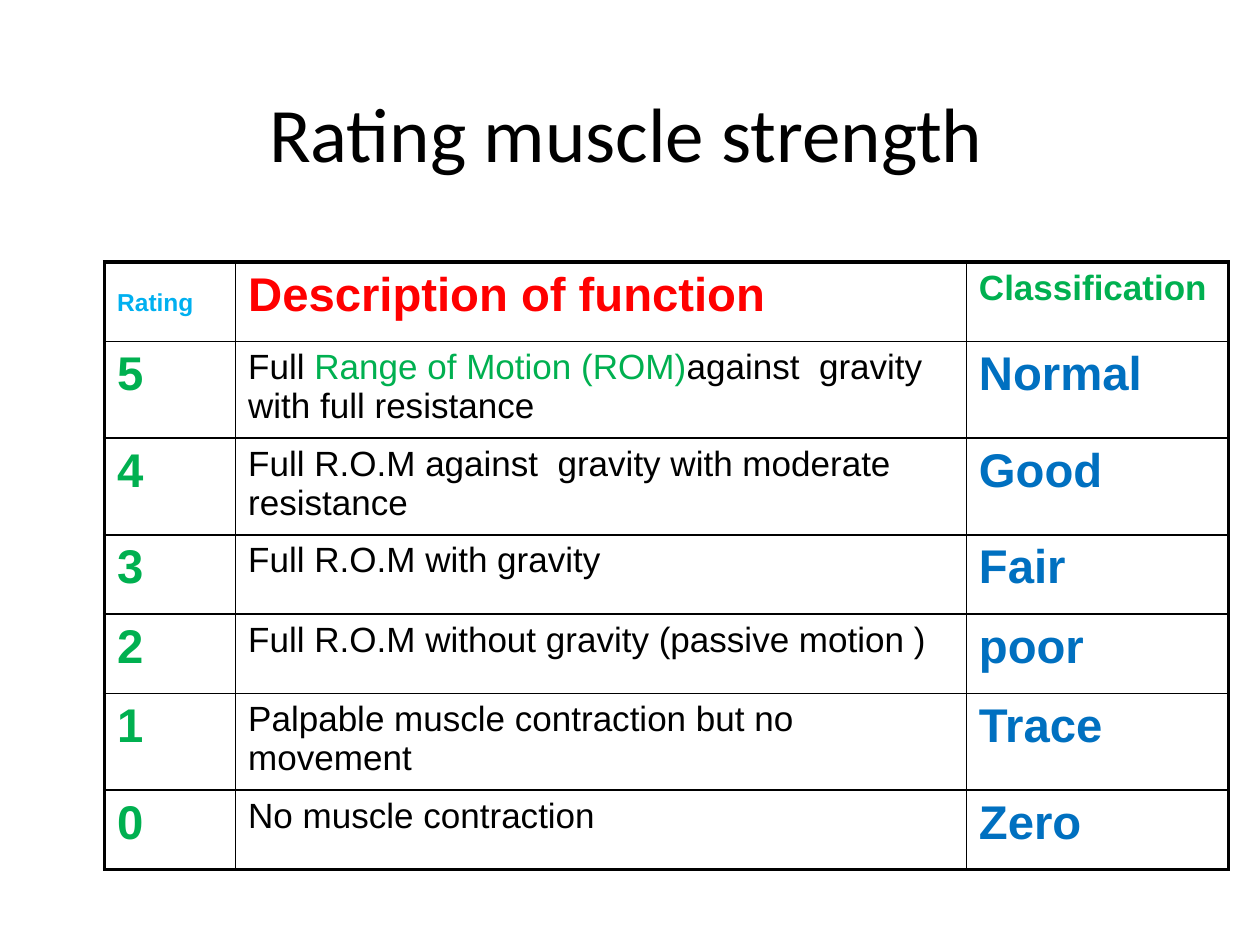
"""Build the muscle strength rating slide."""
from lxml.etree import SubElement
from pptx import Presentation
from pptx.dml.color import RGBColor
from pptx.enum.text import MSO_ANCHOR, PP_ALIGN
from pptx.oxml.ns import qn
from pptx.util import Inches, Pt

BLACK, GREEN, BLUE, RED, SKY = "000000", "00B050", "0070C0", "FF0000", "00B0F0"
TITLE = "Rating muscle strength "
HEAD = [
    [("Rating", 14, SKY, True), (" ", 27, BLACK, False)],
    [("Description of function", 27, RED, True)],
    [("Classification", 20, GREEN, True)],
]
GRADES = [
    ("5", [("Full ", BLACK), ("Range of Motion (ROM)", GREEN),
           ("against  gravity with full resistance", BLACK)], "Normal"),
    ("4", [("Full R.O.M against  gravity with moderate  resistance", BLACK)], "Good"),
    ("3", [("Full R.O.M with gravity", BLACK)], "Fair"),
    ("2", [("Full R.O.M without gravity (passive motion )", BLACK)], "poor"),
    ("1", [("Palpable muscle contraction but no movement", BLACK)], "Trace"),
    ("0", [("No muscle contraction", BLACK)], "Zero"),
]
WIDTHS = [1.04, 5.8, 2.08]
ROW_HEIGHT = 0.63
THIN, THICK = 1, 2.25


def color(value):
    return RGBColor.from_string(value)


def style(run, size, tint, bold=False, face="Arial"):
    font = run.font
    font.name, font.size, font.bold = face, Pt(size), bold
    font.color.rgb = color(tint)


def border(cell, side, width):
    props = cell._tc.get_or_add_tcPr()
    line = SubElement(props, qn("a:ln" + side), w=str(Pt(width)))
    fill = SubElement(line, qn("a:solidFill"))
    SubElement(fill, qn("a:srgbClr"), val=BLACK)


def write(cell, parts):
    para = cell.text_frame.paragraphs[0]
    space = SubElement(para._p.get_or_add_pPr(), qn("a:spcBef"))
    SubElement(space, qn("a:spcPct"), val="20000")
    for text, size, tint, bold in parts:
        run = para.add_run()
        run.text = text
        style(run, size, tint, bold)


def add_title(slide):
    box = slide.shapes.add_textbox(Inches(0.83), Inches(0.42), Inches(8.42), Inches(1.25))
    frame = box.text_frame
    frame.word_wrap = True
    frame.vertical_anchor = MSO_ANCHOR.MIDDLE
    frame.text = TITLE
    para = frame.paragraphs[0]
    para.alignment = PP_ALIGN.CENTER
    style(para.runs[0], 44, BLACK, face="Calibri")


def add_grid(slide):
    rows = [HEAD] + [
        [[(grade, 27, GREEN, True)],
         [(text, 20, tint, False) for text, tint in parts],
         [(label, 27, BLUE, True)]]
        for grade, parts, label in GRADES
    ]
    last_row, last_col = len(rows) - 1, len(WIDTHS) - 1
    table = slide.shapes.add_table(
        len(rows), len(WIDTHS), Inches(0.83), Inches(2.08),
        Inches(sum(WIDTHS)), Inches(ROW_HEIGHT * len(rows))).table
    table.first_row = table.horz_banding = False
    for col, width in zip(table.columns, WIDTHS):
        col.width = Inches(width)
    for r, row in enumerate(rows):
        table.rows[r].height = Inches(ROW_HEIGHT)
        for c, parts in enumerate(row):
            cell = table.cell(r, c)
            write(cell, parts)
            edges = {"L": c == 0, "R": c == last_col, "T": r == 0, "B": r == last_row}
            for side, outer in edges.items():
                border(cell, side, THICK if outer else THIN)
            cell.fill.background()


def main():
    deck = Presentation()
    deck.slide_width, deck.slide_height = Inches(10), Inches(7.5)
    slide = deck.slides.add_slide(deck.slide_layouts[6])
    add_title(slide)
    add_grid(slide)
    deck.save("out.pptx")


if __name__ == "__main__":
    main()
